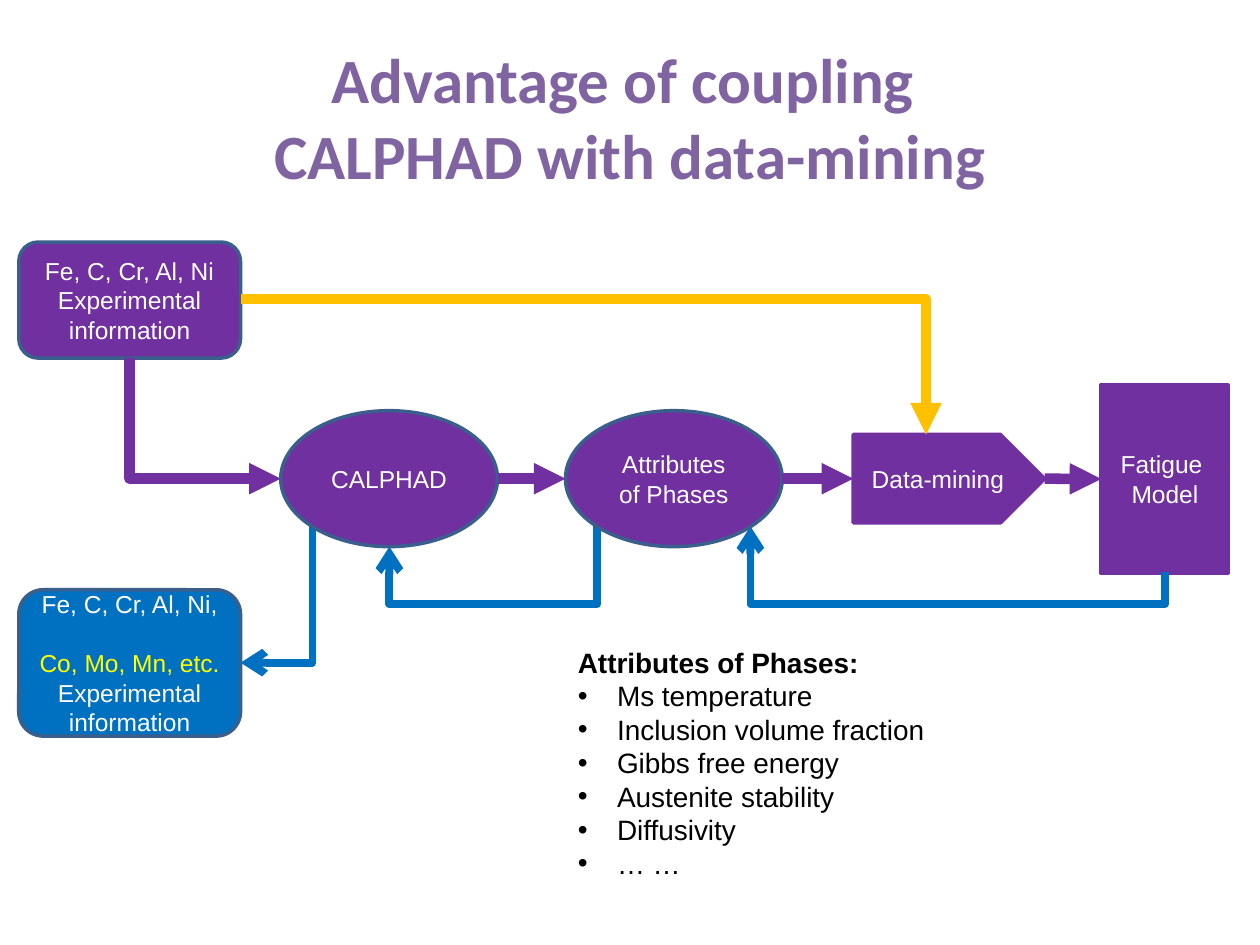
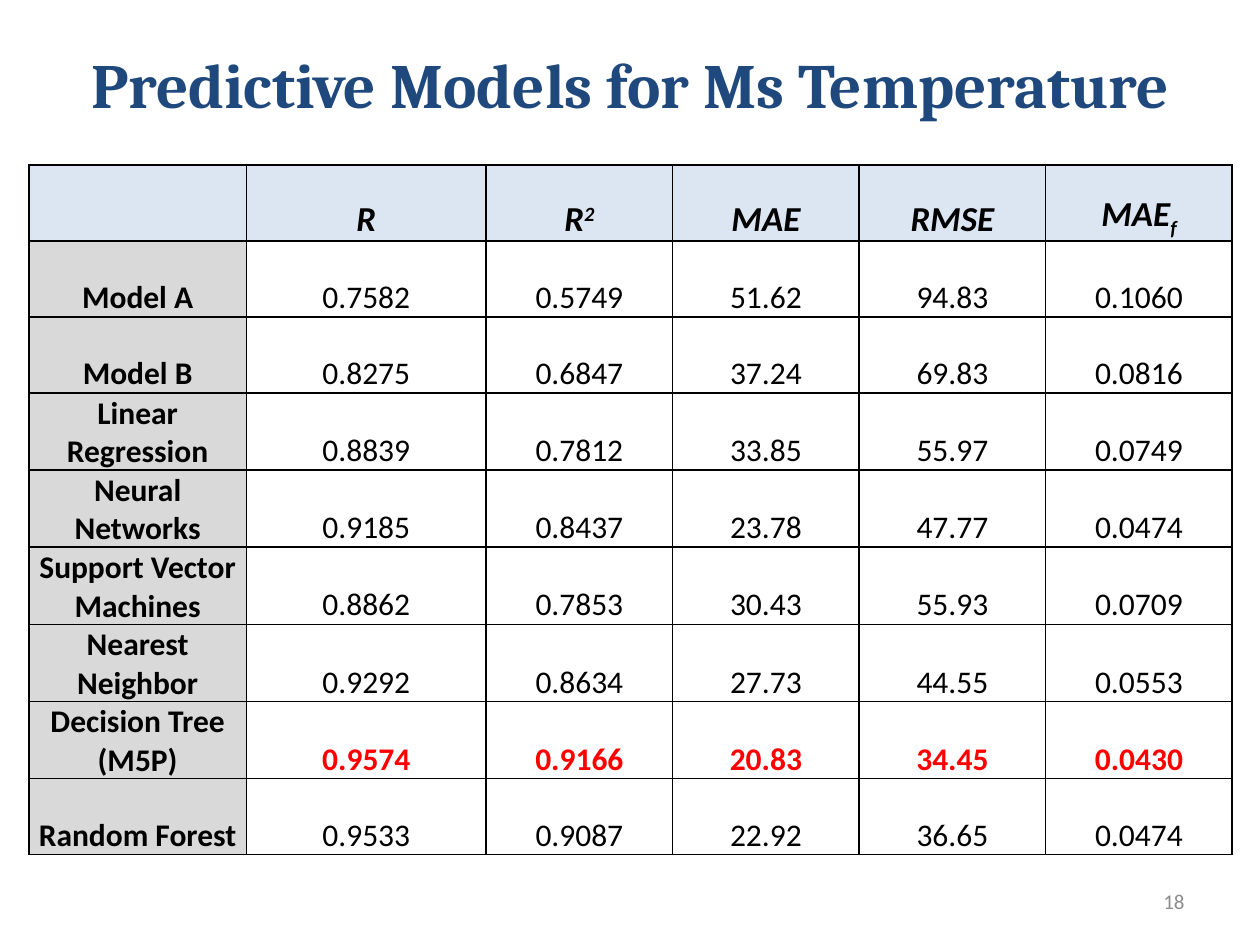
from lxml import etree
from pptx import Presentation
from pptx.dml.color import RGBColor
from pptx.enum.shapes import MSO_CONNECTOR, MSO_SHAPE
from pptx.enum.text import MSO_ANCHOR, MSO_AUTO_SIZE, PP_ALIGN
from pptx.oxml.ns import qn
from pptx.util import Cm, Pt

STRAIGHT, ELBOW = MSO_CONNECTOR.STRAIGHT, MSO_CONNECTOR.ELBOW
ROUNDED, RECTANGLE = MSO_SHAPE.ROUNDED_RECTANGLE, MSO_SHAPE.RECTANGLE
OVAL, PENTAGON = MSO_SHAPE.OVAL, MSO_SHAPE.PENTAGON
CENTER, RIGHT = PP_ALIGN.CENTER, PP_ALIGN.RIGHT
TOP, MIDDLE, BOTTOM = MSO_ANCHOR.TOP, MSO_ANCHOR.MIDDLE, MSO_ANCHOR.BOTTOM

PURPLE = RGBColor(0x70, 0x30, 0xA0)
BLUE = RGBColor(0x00, 0x70, 0xC0)
GOLD = RGBColor(0xFF, 0xC0, 0x00)
OUTLINE = RGBColor(0x3A, 0x5F, 0x8C)
LILAC = RGBColor(0x80, 0x64, 0xA2)
NAVY = RGBColor(0x1F, 0x49, 0x7D)
WHITE = RGBColor(0xFF, 0xFF, 0xFF)
BLACK = RGBColor(0x00, 0x00, 0x00)
YELLOW = RGBColor(0xFF, 0xFF, 0x00)
RED = RGBColor(0xFF, 0x00, 0x00)
GRAY = RGBColor(0x8C, 0x8C, 0x8C)
HEADER_FILL = RGBColor(0xDC, 0xE6, 0xF2)
LABEL_FILL = RGBColor(0xD9, 0xD9, 0xD9)


def set_font(paragraph, name, size, color, bold=False, italic=False):
    font = paragraph.font
    font.name, font.size, font.bold, font.italic = name, Pt(size), bold, italic
    font.color.rgb = color


def style_connector(connector, color, width, head):
    connector.line.color.rgb = color
    connector.line.width = Pt(width)
    line = connector.line._get_or_add_ln()
    etree.SubElement(line, qn("a:tailEnd"), type=head)
    etree.SubElement(connector._element.spPr, qn("a:effectLst"))


presentation = Presentation()
presentation.slide_width, presentation.slide_height = Cm(25.4), Cm(19.05)

# Title text, font, colour, anchor, box
titles = [
    ("Advantage of coupling \vCALPHAD with data-mining", "Calibri", LILAC,
     MIDDLE, (1.27, 0.76, 22.86, 3.18)),
    ("Predictive Models for Ms Temperature", "Cambria", NAVY,
     TOP, (0, 0.79, 25.4, 2.44)),
]
for text, font_name, color, anchor, box in titles:
    slide = presentation.slides.add_slide(presentation.slide_layouts[5])
    title = slide.shapes.title
    title.left, title.top, title.width, title.height = map(Cm, box)
    frame = title.text_frame
    frame.text = text
    frame.auto_size = MSO_AUTO_SIZE.NONE
    frame.vertical_anchor = anchor
    frame.paragraphs[0].alignment = CENTER
    set_font(frame.paragraphs[0], font_name, 36, color, bold=True)
workflow_slide, models_slide = presentation.slides

# Workflow: boxes
shapes = workflow_slide.shapes
boxes = [
    ("experiment", ROUNDED, (0.38, 4.88, 4.47, 2.34), PURPLE, OUTLINE,
     "Fe, C, Cr, Al, Ni\nExperimental information"),
    ("fatigue", RECTANGLE, (22.2, 7.75, 2.57, 3.81), PURPLE, PURPLE,
     "Fatigue \nModel"),
    ("mining", PENTAGON, (17.2, 8.76, 3.86, 1.78), PURPLE, PURPLE,
     "Data-mining"),
    ("extended", ROUNDED, (0.38, 11.89, 4.47, 2.95), BLUE, OUTLINE,
     "Fe, C, Cr, Al, Ni, \v\nExperimental information"),
    ("calphad", OVAL, (5.66, 8.28, 4.37, 2.74), PURPLE, OUTLINE, "CALPHAD"),
    ("phases", OVAL, (11.4, 8.28, 4.37, 2.74), PURPLE, OUTLINE,
     "Attributes\nof Phases"),
]
steps = {}
for name, kind, box, fill, outline, text in boxes:
    shape = shapes.add_shape(kind, *map(Cm, box))
    shape.shadow.inherit = False
    shape.fill.solid()
    shape.fill.fore_color.rgb = fill
    shape.line.color.rgb = outline
    shape.line.width = Pt(2)
    shape.text_frame.text = text
    shape.text_frame.word_wrap = True
    shape.text_frame.vertical_anchor = MIDDLE
    for paragraph in shape.text_frame.paragraphs:
        paragraph.alignment = CENTER
        set_font(paragraph, "Arial", 14, WHITE)
    steps[name] = shape
added_elements = steps["extended"].text_frame.paragraphs[0].add_run()
added_elements.text = "Co, Mo, Mn, etc."
added_elements.font.color.rgb = YELLOW

# Workflow: elbow arrows as (step, site), point at each end; dip is the height
# of the horizontal stretch of a three-part elbow
DIP = 12.18
elbows = [
    ("experiment", 3, (4.85, 6.03), "mining", 0, (18.67, 8.76), None, GOLD),
    ("fatigue", 2, (23.48, 11.54), "phases", 5, (15.13, 10.61), DIP, BLUE),
    ("phases", 3, (12.04, 10.61), "calphad", 4, (7.85, 11.02), DIP, BLUE),
    ("calphad", 3, (6.3, 10.61), "extended", 3, (4.85, 13.36), None, BLUE),
    ("experiment", 2, (2.61, 7.22), "calphad", 2, (5.66, 9.65), None, PURPLE),
]
for source, out_site, start, target, in_site, end, dip, color in elbows:
    connector = shapes.add_connector(ELBOW, *map(Cm, start + end))
    (x1, y1), (x2, y2) = start, end
    transform = connector._element.spPr.find(qn("a:xfrm"))
    if color != GOLD:
        # A path that sets off vertically is a horizontal one turned by 90°
        width, height = abs(y2 - y1), abs(x2 - x1)
        connector.left = Cm((x1 + x2 - width) / 2)
        connector.top = Cm((y1 + y2 - height) / 2)
        connector.width, connector.height = Cm(width), Cm(height)
        for flip, turned in (("flipH", y2 < y1), ("flipV", x2 > x1)):
            transform.set(flip, str(int(turned)))
        transform.set("rot", "5400000")
    geometry = connector._element.spPr.find(qn("a:prstGeom"))
    if dip is None:
        geometry.set("prst", "bentConnector2")
    else:
        bend = round((dip - y1) / (y2 - y1) * 100000)
        etree.SubElement(geometry.find(qn("a:avLst")), qn("a:gd"),
                         name="adj1", fmla=f"val {bend}")
    joints = connector._element.nvCxnSpPr.cNvCxnSpPr
    for tag, step, site in (("a:stCxn", source, out_site),
                            ("a:endCxn", target, in_site)):
        etree.SubElement(joints, qn(tag), id=str(steps[step].shape_id),
                         idx=str(site))
    if color == BLUE:
        style_connector(connector, color, 4.5, "arrow")
    else:
        style_connector(connector, color, 6, "triangle")

# The ellipses lie over the ends of the feedback arrows
for name in ("calphad", "phases"):
    shapes._spTree.append(steps[name]._element)

# Workflow: straight arrows
flow = ["calphad", "phases", "mining", "fatigue"]
for source, target in zip(flow, flow[1:]):
    first, second = steps[source], steps[target]
    middle = Cm(9.65)
    connector = shapes.add_connector(
        STRAIGHT, first.left + first.width, middle, second.left, middle)
    if source == "mining":
        connector.begin_connect(first, 3)
    if target != "phases":
        connector.end_connect(second, 1)
    style_connector(connector, PURPLE, 6, "triangle")

# Workflow: list of attributes
attributes = ["Attributes of Phases:", "Ms temperature",
              "Inclusion volume fraction", "Gibbs free energy",
              "Austenite stability", "Diffusivity", "… …"]
attribute_box = shapes.add_textbox(Cm(11.4), Cm(12.88), Cm(9.22), Cm(5.05))
frame = attribute_box.text_frame
frame.word_wrap = True
frame.text = "\n".join(attributes)
for index, paragraph in enumerate(frame.paragraphs):
    if index > 0:
        properties = paragraph._p.get_or_add_pPr()
        properties.set("marL", str(Cm(0.79)))
        properties.set("indent", str(-Cm(0.79)))
        etree.SubElement(properties, qn("a:buFont"), typeface="Arial")
        etree.SubElement(properties, qn("a:buChar"), char="•")
    set_font(paragraph, "Arial", 16, BLACK, bold=index == 0)

# Models: slide number
number_box = models_slide.shapes.add_textbox(
    Cm(18.21), Cm(17.65), Cm(5.92), Cm(1.02))
frame = number_box.text_frame
frame.word_wrap = True
frame.vertical_anchor = MIDDLE
frame.text = "18"
frame.paragraphs[0].alignment = RIGHT
set_font(frame.paragraphs[0], "Calibri", 12, GRAY)

# Models: table of scores
BEST = "Decision Tree (M5P)"
rows = [
    ["", "R", "R", "MAE", "RMSE", "MAE"],
    ["Model A", "0.7582", "0.5749", "51.62", "94.83", "0.1060"],
    ["Model B", "0.8275", "0.6847", "37.24", "69.83", "0.0816"],
    ["Linear Regression", "0.8839", "0.7812", "33.85", "55.97", "0.0749"],
    ["Neural Networks", "0.9185", "0.8437", "23.78", "47.77", "0.0474"],
    ["Support Vector Machines", "0.8862", "0.7853", "30.43", "55.93", "0.0709"],
    ["Nearest Neighbor", "0.9292", "0.8634", "27.73", "44.55", "0.0553"],
    [BEST, "0.9574", "0.9166", "20.83", "34.45", "0.0430"],
    ["Random Forest", "0.9533", "0.9087", "22.92", "36.65", "0.0474"],
]
column_widths = [4.39, 4.83] + [3.76] * 4
row_height = 1.53
table = models_slide.shapes.add_table(
    len(rows), len(column_widths), Cm(0.58), Cm(3.33),
    Cm(sum(column_widths)), Cm(row_height * len(rows))).table
table.first_row = table.horz_banding = False
for column, width in zip(table.columns, column_widths):
    column.width = Cm(width)
for row_index, values in enumerate(rows):
    table.rows[row_index].height = Cm(row_height)
    for column_index, value in enumerate(values):
        cell = table.cell(row_index, column_index)
        is_header, is_label = row_index == 0, column_index == 0
        is_best = values[0] == BEST and not is_label
        cell.text = value
        cell.vertical_anchor = BOTTOM
        cell.margin_left = cell.margin_right = cell.margin_top = Cm(0.03)
        cell.margin_bottom = 0
        paragraph = cell.text_frame.paragraphs[0]
        paragraph.alignment = CENTER
        set_font(paragraph, "Calibri", 20 if is_header else 18,
                 RED if is_best else BLACK,
                 bold=is_header or is_label or is_best, italic=is_header)
        properties = cell._tc.get_or_add_tcPr()
        for side in ("a:lnL", "a:lnR", "a:lnT", "a:lnB"):
            border = etree.SubElement(properties, qn(side), w=str(Pt(1)))
            border_fill = etree.SubElement(border, qn("a:solidFill"))
            etree.SubElement(border_fill, qn("a:srgbClr"), val=str(BLACK))
        if is_header or is_label:
            cell.fill.solid()
            cell.fill.fore_color.rgb = HEADER_FILL if is_header else LABEL_FILL
        else:
            cell.fill.background()

# Raised and lowered marks in the header
for column_index, mark, baseline in ((2, "2", 30000), (5, "f", -25000)):
    run = table.cell(0, column_index).text_frame.paragraphs[0].add_run()
    run.text = mark
    run.font._element.set("baseline", str(baseline))

presentation.save("out.pptx")
